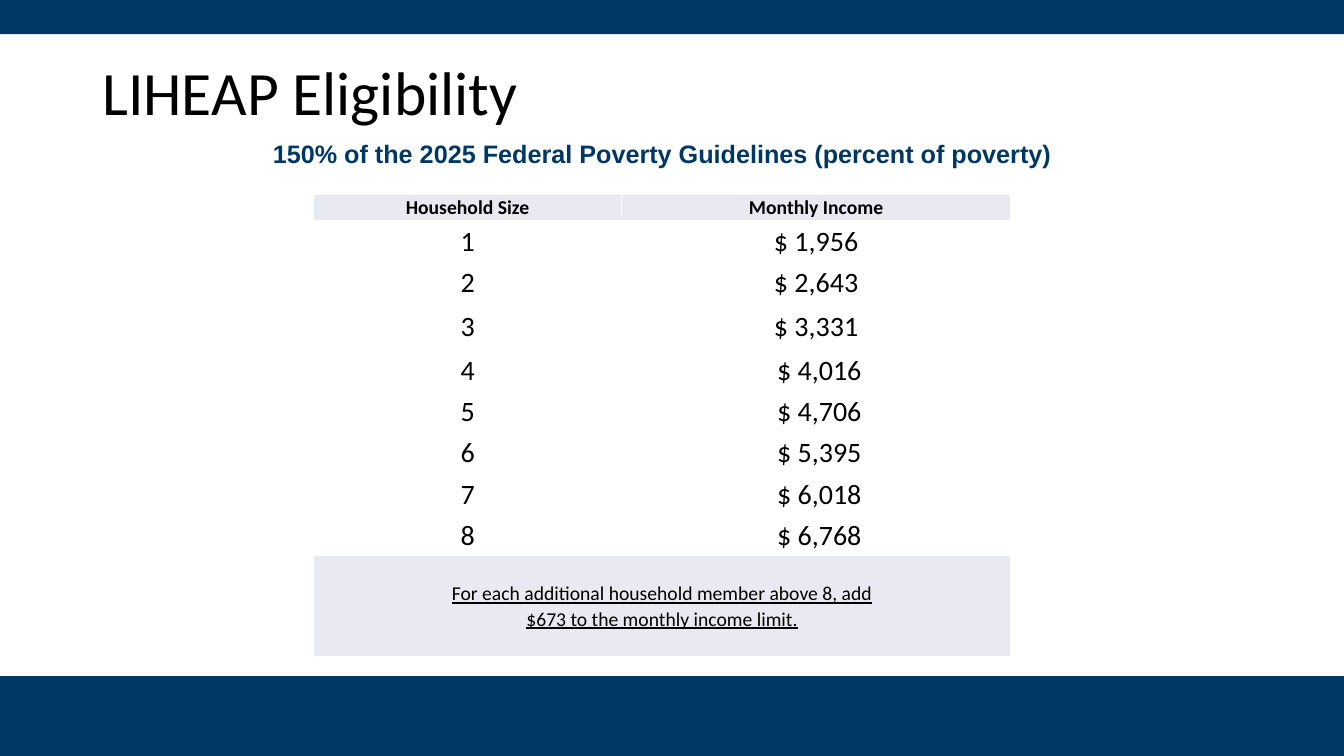
from lxml.etree import SubElement
from pptx import Presentation
from pptx.dml.color import RGBColor
from pptx.enum.shapes import MSO_SHAPE as Shape
from pptx.enum.text import MSO_ANCHOR as Anchor, MSO_AUTO_SIZE as AutoSize, PP_ALIGN as Align
from pptx.oxml.ns import qn
from pptx.util import Pt

NAVY, BLACK, WHITE, PALE = "003865", "000000", "FFFFFF", "E9EAF1"
WIDTH, HEIGHT = 960, 540
INCOMES = ["1,956", "2,643", "3,331", "4,016", "4,706", "5,395", "6,018", "6,768"]
NOTE = ["For each additional household member above 8, add",
        "$673 to the monthly income limit."]


def color(value):
    return RGBColor.from_string(value)


class EligibilitySlide:
    """Draws the elements of the current slide in one style."""

    def __init__(self, presentation):
        self.slide = presentation.slides.add_slide(presentation.slide_layouts[6])

    def style(self, paragraph, size, ink=BLACK, name="Calibri", bold=False):
        font = paragraph.font
        font.size, font.name, font.bold = Pt(size), name, bold
        font.color.rgb = color(ink)

    def band(self, top, height):
        shape = self.slide.shapes.add_shape(Shape.RECTANGLE, 0, Pt(top), Pt(WIDTH), Pt(height))
        shape.shadow.inherit = False
        shape.fill.solid()
        shape.fill.fore_color.rgb = color(NAVY)
        shape.line.fill.background()

    def text(self, left, top, width, height, words, size, wrap=True, align=Align.LEFT,
             anchor=Anchor.TOP, spacing=1.0, **font):
        shape = self.slide.shapes.add_textbox(Pt(left), Pt(top), Pt(width), Pt(height))
        frame = shape.text_frame
        frame.word_wrap, frame.vertical_anchor = wrap, anchor
        frame.auto_size = AutoSize.NONE if wrap else AutoSize.SHAPE_TO_FIT_TEXT
        paragraph = frame.paragraphs[0]
        paragraph.text, paragraph.alignment = words, align
        paragraph.line_spacing = spacing
        self.style(paragraph, size, **font)

    def table(self, left, top, widths, heights):
        frame = self.slide.shapes.add_table(len(heights), len(widths), Pt(left), Pt(top),
                                            Pt(sum(widths)), Pt(sum(heights)))
        table = frame.table
        table.first_row = table.horz_banding = False
        for column, width in zip(table.columns, widths):
            column.width = Pt(width)
        for row, height in zip(table.rows, heights):
            row.height = Pt(height)
        return table

    def cell(self, cell, lines, size, fill, bold=False, underline=False, indent=0):
        properties = cell._tc.get_or_add_tcPr()
        for side in ("a:lnL", "a:lnR", "a:lnT", "a:lnB"):
            line = SubElement(properties, qn(side), w=str(Pt(1)))
            SubElement(SubElement(line, qn("a:solidFill")), qn("a:srgbClr"), val=WHITE)
        cell.fill.solid()
        cell.fill.fore_color.rgb = color(fill)
        cell.margin_left, cell.margin_right = Pt(5 + indent), Pt(5)
        cell.margin_top = cell.margin_bottom = 0
        cell.vertical_anchor = Anchor.MIDDLE
        cell.text = "\n".join(lines)
        for paragraph in cell.text_frame.paragraphs:
            paragraph.alignment, paragraph.line_spacing = Align.CENTER, 1.07
            self.style(paragraph, size, bold=bold)
            paragraph.font.underline = underline


def main():
    presentation = Presentation()
    presentation.slide_width, presentation.slide_height = Pt(WIDTH), Pt(HEIGHT)
    page = EligibilitySlide(presentation)
    page.band(483, 57)
    page.band(0, 24.5)

    heights = [17.3, 29.5, 29.5, 33] + [29.5] * 5 + [72.5]
    table = page.table(224, 139, [220, 278], heights)
    for column, heading in enumerate(["Household Size", "Monthly Income"]):
        page.cell(table.cell(0, column), [heading], 14, PALE, bold=True)
    for size, income in enumerate(INCOMES, 1):
        page.cell(table.cell(size, 0), [str(size)], 20, WHITE)
        page.cell(table.cell(size, 1), [f"$ {income}"], 20, WHITE, indent=4.5 if size > 3 else 0)
    note = table.cell(len(heights) - 1, 0)
    note.merge(table.cell(len(heights) - 1, 1))
    page.cell(note, NOTE, 14, PALE, underline=True)

    page.text(185, 95, 576, 29, "150% of the 2025 Federal Poverty Guidelines (percent of poverty)",
              18, wrap=False, align=Align.CENTER, ink=NAVY, name="Arial", bold=True)
    page.text(66, 29, 636.5, 78.5, "LIHEAP Eligibility", 44, anchor=Anchor.MIDDLE, spacing=0.9)
    presentation.save("out.pptx")


if __name__ == "__main__":
    main()
